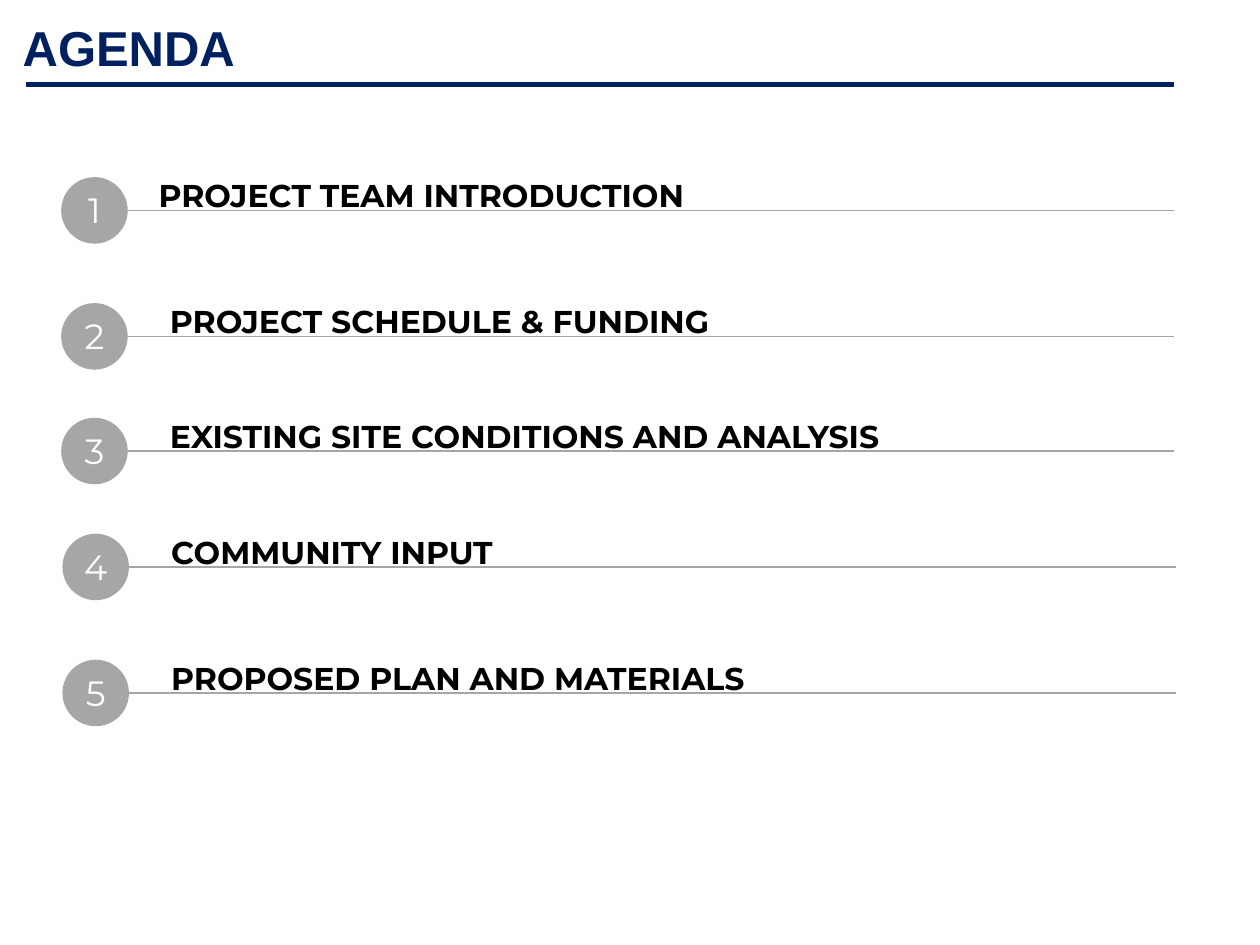
from lxml.etree import SubElement
from pptx import Presentation
from pptx.dml.color import RGBColor
from pptx.enum.shapes import MSO_CONNECTOR as CONNECTOR, MSO_SHAPE as SHAPE
from pptx.enum.text import MSO_ANCHOR as ANCHOR, MSO_AUTO_SIZE as AUTO_SIZE, PP_ALIGN as ALIGN
from pptx.oxml.ns import qn
from pptx.util import Pt

PX = 9144  # 100 px to the inch
NAVY = RGBColor(0x00, 0x20, 0x60)
GRAY = RGBColor(0xA6, 0xA6, 0xA6)
BLACK = RGBColor(0x00, 0x00, 0x00)
WHITE = RGBColor(0xFF, 0xFF, 0xFF)


def write(shape, text, *, font="Montserrat", size=18, color=BLACK, bold=False,
          align=ALIGN.LEFT, anchor=ANCHOR.TOP, fit=AUTO_SIZE.SHAPE_TO_FIT_TEXT):
    frame = shape.text_frame
    frame.word_wrap = True
    frame.auto_size = fit
    frame.vertical_anchor = anchor
    paragraph = frame.paragraphs[0]
    paragraph.alignment = align
    run = paragraph.add_run()
    run.text = text
    run.font.name = font
    run.font.size = Pt(size)
    run.font.bold = bold
    run.font.color.rgb = color


def add_rule(shapes, left, right, y, color, width):
    rule = shapes.add_connector(CONNECTOR.STRAIGHT, left * PX, y * PX, right * PX, y * PX)
    rule.line.color.rgb = color
    rule.line.width = Pt(width)
    SubElement(rule._element.spPr, qn("a:effectLst"))


prs = Presentation()
prs.slide_width, prs.slide_height = 1000 * PX, 750 * PX
slide = prs.slides.add_slide(prs.slide_layouts[5])

# Heading and its underline
heading = slide.shapes.title
heading.left, heading.top, heading.width, heading.height = 8 * PX, 7 * PX, 975 * PX, 60 * PX
write(heading, "AGENDA", font="Arial", size=28, color=NAVY, bold=True,
      anchor=ANCHOR.MIDDLE, fit=AUTO_SIZE.NONE)
add_rule(slide.shapes, 21, 932, 67, NAVY, 2.75)

# Agenda items: topic, circle left, circle top, topic indent from the circle
items = [
    ("PROJECT TEAM INTRODUCTION", 50, 142, 66),
    ("PROJECT SCHEDULE & FUNDING", 50, 242, 75),
    ("EXISTING SITE CONDITIONS AND ANALYSIS", 50, 333, 75),
    ("COMMUNITY INPUT", 51, 425, 75),
    ("PROPOSED PLAN AND MATERIALS", 51, 525, 75),
]
DIAMETER = 50

for number, (topic, left, top, indent) in enumerate(items, start=1):
    row = slide.shapes.add_group_shape().shapes

    topic_box = row.add_textbox((left + indent) * PX, (top - 7) * PX, 721 * PX, 40 * PX)
    write(topic_box, topic, bold=True)

    circle = row.add_shape(SHAPE.OVAL, left * PX, top * PX, DIAMETER * PX, DIAMETER * PX)
    circle.shadow.inherit = False
    circle.fill.solid()
    circle.fill.fore_color.rgb = GRAY
    circle.line.color.rgb = GRAY
    circle.line.width = Pt(2)

    number_box = row.add_textbox((left - 21) * PX, (top + 3) * PX, 92 * PX, 44 * PX)
    write(number_box, str(number), size=20, color=WHITE, align=ALIGN.CENTER)

    add_rule(row, left + DIAMETER, left + 882, top + DIAMETER // 2, GRAY, 0.75)

prs.save("out.pptx")
